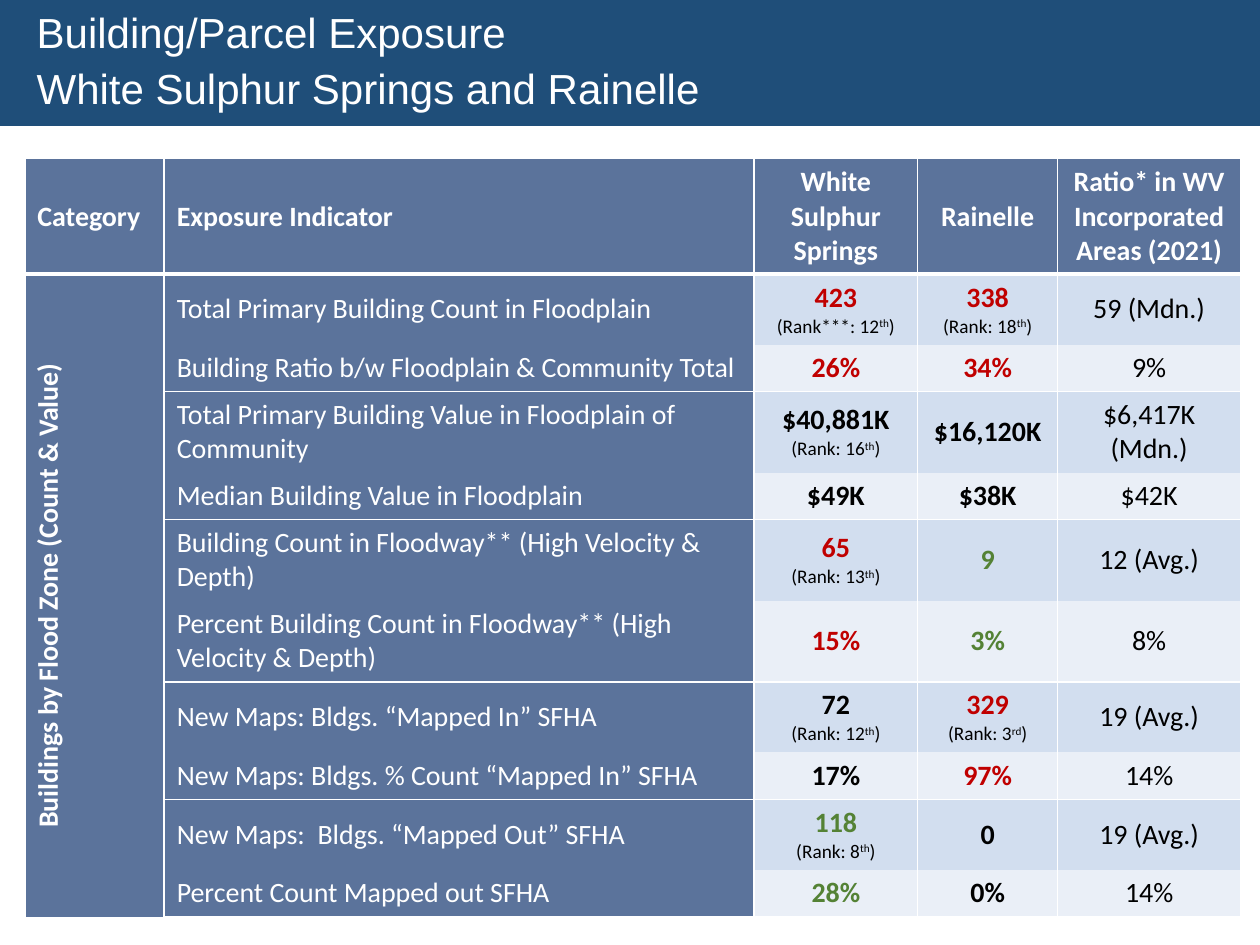
from lxml.etree import SubElement
from pptx import Presentation
from pptx.dml.color import RGBColor
from pptx.enum.shapes import MSO_SHAPE as Shape
from pptx.enum.text import MSO_ANCHOR as Anchor, PP_ALIGN as Align
from pptx.oxml.ns import qn
from pptx.util import Cm, Pt

NAVY = RGBColor(0x1F, 0x4E, 0x79)
SLATE = RGBColor(0x5B, 0x73, 0x9B)
BAND_DARK = RGBColor(0xD2, 0xDE, 0xEF)
BAND_LIGHT = RGBColor(0xEA, 0xEF, 0xF7)
WHITE = RGBColor(0xFF, 0xFF, 0xFF)
BLACK = RGBColor(0, 0, 0)
RED = RGBColor(0xC0, 0, 0)
GREEN = RGBColor(0x54, 0x82, 0x35)

TITLE = ["Building/Parcel Exposure", "White Sulphur Springs and Rainelle"]
HEADERS = ["Category", "Exposure Indicator", "White Sulphur Springs", "Rainelle",
           "Ratio* in WV Incorporated Areas (2021)"]
CATEGORY = "Buildings by Flood Zone (Count & Value)"
COLUMN_WIDTHS = [2.81, 11.89, 3.3, 2.82, 3.69]
HEADER_HEIGHT, SINGLE, RANKED, WRAPPED = 2.3, 0.94, 1.42, 1.63

# Row height, indicator, two towns as (value, colour, rank, ordinal), state ratio
ROWS = [
    (RANKED, "Total Primary Building Count in Floodplain",
     ("423", RED, "Rank***: 12", "th"), ("338", RED, "Rank: 18", "th"), "59 (Mdn.)"),
    (SINGLE, "Building Ratio b/w Floodplain & Community Total",
     ("26%", RED), ("34%", RED), "9%"),
    (WRAPPED, "Total Primary Building Value in Floodplain of Community",
     ("$40,881K", BLACK, "Rank: 16", "th"), ("$16,120K", BLACK), "$6,417K (Mdn.)"),
    (SINGLE, "Median Building Value in Floodplain",
     ("$49K", BLACK), ("$38K", BLACK), "$42K"),
    (WRAPPED, "Building Count in Floodway** (High Velocity & Depth)",
     ("65", RED, "Rank: 13", "th"), ("9", GREEN), "12 (Avg.)"),
    (WRAPPED, "Percent Building Count in Floodway** (High Velocity & Depth)",
     ("15%", RED), ("3%", GREEN), "8%"),
    (RANKED, "New Maps: Bldgs. “Mapped In” SFHA",
     ("72", BLACK, "Rank: 12", "th"), ("329", RED, "Rank: 3", "rd"), "19 (Avg.)"),
    (SINGLE, "New Maps: Bldgs. % Count “Mapped In” SFHA",
     ("17%", BLACK), ("97%", RED), "14%"),
    (RANKED, "New Maps:  Bldgs. “Mapped Out” SFHA",
     ("118", GREEN, "Rank: 8", "th"), ("0", BLACK), "19 (Avg.)"),
    (SINGLE, "Percent Count Mapped out SFHA",
     ("28%", GREEN), ("0%", BLACK), "14%"),
]


def format_run(run, size, color, bold=False, name="Calibri"):
    font = run.font
    font.size, font.bold, font.name = Pt(size), bold, name
    font.color.rgb = color


def add_title_bar(slide, width):
    bar = slide.shapes.add_shape(Shape.RECTANGLE, 0, 0, width, Cm(2.54))
    bar.shadow.inherit = False
    bar.fill.solid()
    bar.fill.fore_color.rgb = NAVY
    bar.line.fill.background()
    frame = bar.text_frame
    frame.margin_left = Cm(0.74)
    frame.vertical_anchor = Anchor.MIDDLE
    frame.text = "\n".join(TITLE)
    for paragraph in frame.paragraphs:
        paragraph.alignment = Align.LEFT
        paragraph.line_spacing = 0.9
        format_run(paragraph.runs[0], 24, WHITE, name="Arial")
    frame.paragraphs[1].space_before = Pt(6)


def set_borders(cell, top, bottom):
    """White cell borders, 1 pt at the sides; a width of 0 leaves the edge out."""
    properties = cell._tc.get_or_add_tcPr()
    for tag, width in (("a:lnL", 1), ("a:lnR", 1), ("a:lnT", top), ("a:lnB", bottom)):
        line = SubElement(properties, qn(tag), w=str(Pt(width)))
        if width:
            fill = SubElement(line, qn("a:solidFill"))
            SubElement(fill, qn("a:srgbClr"), val=str(WHITE))
        else:
            SubElement(line, qn("a:noFill"))


def fill_cell(cell, text, fill, color, bold=False, alignment=Align.CENTER):
    cell.fill.solid()
    cell.fill.fore_color.rgb = fill
    cell.vertical_anchor = Anchor.MIDDLE
    cell.text_frame.text = text
    paragraph = cell.text_frame.paragraphs[0]
    paragraph.alignment = alignment
    format_run(paragraph.runs[0], 16, color, bold)


def add_rank(cell, rank, ordinal):
    """Small second line with a raised ordinal ending."""
    paragraph = cell.text_frame.add_paragraph()
    paragraph.alignment = Align.CENTER
    for text in (f"({rank}", ordinal, ")"):
        run = paragraph.add_run()
        run.text = text
        format_run(run, 11, BLACK)
    paragraph.runs[1]._r.get_or_add_rPr().set("baseline", "30000")


def fill_header(table):
    for column, text in enumerate(HEADERS):
        cell = table.cell(0, column)
        set_borders(cell, top=1, bottom=3)
        alignment = Align.LEFT if column < 2 else Align.CENTER
        fill_cell(cell, text, SLATE, WHITE, True, alignment)


def fill_category(table):
    last = len(ROWS)
    for row in range(1, last + 1):
        set_borders(table.cell(row, 0), top=3 if row == 1 else 0, bottom=int(row == last))
    cell = table.cell(1, 0)
    cell.merge(table.cell(last, 0))
    fill_cell(cell, CATEGORY, SLATE, WHITE, True)
    cell._tc.get_or_add_tcPr().set("vert", "vert270")


def fill_row(table, row, indicator, towns, ratio):
    """Rows come in pairs, with a rule only below the second of each."""
    opens_pair = row % 2 == 1
    top = (3 if row == 1 else 1) if opens_pair else 0
    band = BAND_DARK if opens_pair else BAND_LIGHT
    for column in range(1, len(HEADERS)):
        set_borders(table.cell(row, column), top, bottom=0 if opens_pair else 1)
    fill_cell(table.cell(row, 1), indicator, SLATE, WHITE, alignment=Align.LEFT)
    for column, (value, color, *rank) in enumerate(towns, start=2):
        cell = table.cell(row, column)
        fill_cell(cell, value, band, color, True)
        if rank:
            add_rank(cell, *rank)
    fill_cell(table.cell(row, 4), ratio, band, BLACK)


def add_exposure_table(slide):
    heights = [HEADER_HEIGHT] + [row[0] for row in ROWS]
    table = slide.shapes.add_table(
        len(heights), len(HEADERS), Cm(0.5), Cm(3.2),
        Cm(sum(COLUMN_WIDTHS)), Cm(sum(heights))).table
    for column, width in zip(table.columns, COLUMN_WIDTHS):
        column.width = Cm(width)
    for row, height in zip(table.rows, heights):
        row.height = Cm(height)
    fill_header(table)
    fill_category(table)
    for row, (_, indicator, *towns, ratio) in enumerate(ROWS, start=1):
        fill_row(table, row, indicator, towns, ratio)


def main():
    presentation = Presentation()
    presentation.slide_width, presentation.slide_height = Cm(25.4), Cm(19.05)
    slide = presentation.slides.add_slide(presentation.slide_layouts[6])
    add_title_bar(slide, presentation.slide_width)
    add_exposure_table(slide)
    presentation.save("out.pptx")


if __name__ == "__main__":
    main()
